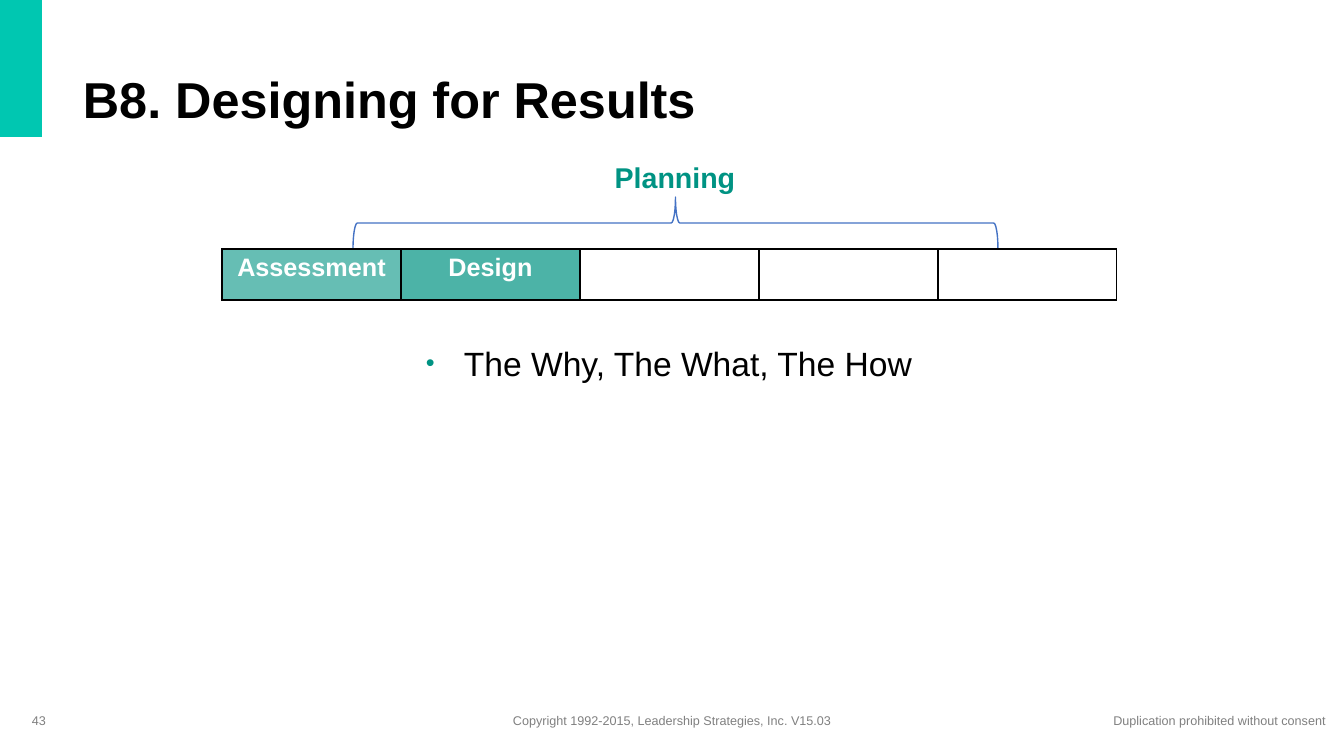
from lxml.etree import SubElement
from pptx import Presentation
from pptx.dml.color import RGBColor
from pptx.enum.shapes import MSO_SHAPE
from pptx.enum.text import MSO_ANCHOR as Anchor, PP_ALIGN as Align
from pptx.oxml.ns import qn
from pptx.util import Emu, Pt

COLORS = {"accent": "00C7B1", "teal": "009383", "brace": "4472C4",
          "black": "000000", "white": "FFFFFF", "grey": "808080"}
FONT = "Arial"
SLIDE = (1344, 756)
ACCENT_BAR = (-2, -2, 44, 139)
BRACE = (353, 197, 645, 52)  # as seen, opening downwards
STAGES = [("Assessment", 60), ("Design", 70), ("", None), ("", None), ("", None)]
STAGE_TABLE = (222, 249, 895, 51)
TEXTS = {
    "number": dict(text="43", at=(22, 701, 302, 40), size=9, color="grey", anchor=Anchor.MIDDLE),
    "title": dict(text="B8. Designing for Results", at=(73, 57, 818, 77), size=36,
                  color="black", bold=True, anchor=Anchor.BOTTOM, spacing=0.9),
    "topic": dict(text="The Why, The What, The How", at=(134, 342, 1070, 340), size=24,
                  color="black", align=Align.CENTER, spacing=0.9, bullet=True),
    "planning": dict(text="Planning", at=(601, 155, 148, 50), size=20.4,
                     color="teal", bold=True, align=Align.CENTER),
    "copyright": dict(text="Copyright 1992-2015, Leadership Strategies, Inc. V15.03",
                      at=(501, 708, 342, 25), size=9, color="grey", align=Align.CENTER, wrap=False),
    "notice": dict(text="Duplication prohibited without consent",
                   at=(1102, 708, 235, 25), size=9, color="grey", align=Align.CENTER, wrap=False),
}


def px(length):
    return Emu(round(length * 914400 / 100.8))


def place(at):
    return [px(length) for length in at]


def rgb(name):
    return RGBColor.from_string(COLORS[name])


def write(para, text, size, color, bold=False):
    span = para.add_run()
    span.text = text
    span.font.name, span.font.size, span.font.bold = FONT, Pt(size), bold
    span.font.color.rgb = rgb(color)


def add_bullet(para):
    props = para._p.get_or_add_pPr()
    props.set("marL", str(px(38)))
    props.set("indent", str(px(-38)))
    SubElement(SubElement(props, qn("a:buClr")), qn("a:srgbClr"), val=COLORS["teal"])
    SubElement(props, qn("a:buSzPct"), val="75000")
    SubElement(props, qn("a:buFont"), typeface=FONT)
    SubElement(props, qn("a:buChar"), char="•")


def add_text(page, text, at, size, color, bold=False, align=Align.LEFT,
             anchor=Anchor.TOP, spacing=1.0, wrap=True, bullet=False):
    frame = page.shapes.add_textbox(*place(at)).text_frame
    frame.word_wrap, frame.vertical_anchor = wrap, anchor
    para = frame.paragraphs[0]
    para.alignment, para.line_spacing = align, spacing
    if bullet:
        add_bullet(para)
    write(para, text, size, color, bold)


def add_bar(page):
    bar = page.shapes.add_shape(MSO_SHAPE.RECTANGLE, *place(ACCENT_BAR))
    bar.shadow.inherit = False
    bar.fill.solid()
    bar.fill.fore_color.rgb = rgb("accent")
    bar.line.fill.background()


def add_brace(page):
    """Turn a right brace a quarter so that it points up, keeping its centre."""
    left, top, width, height = BRACE
    shift = (width - height) / 2
    brace = page.shapes.add_shape(MSO_SHAPE.RIGHT_BRACE,
                                  *place((left + shift, top - shift, height, width)))
    brace.rotation = 270
    brace.shadow.inherit = False
    brace.fill.background()
    brace.line.color.rgb = rgb("brace")
    brace.line.width = Pt(1)


def add_borders(cell):
    props = cell._tc.get_or_add_tcPr()
    for side in ("lnL", "lnR", "lnT", "lnB"):
        line = SubElement(props, qn(f"a:{side}"), w=str(Pt(1)))
        fill = SubElement(line, qn("a:solidFill"))
        SubElement(fill, qn("a:srgbClr"), val=COLORS["black"])


def add_stages(page):
    table = page.shapes.add_table(1, len(STAGES), *place(STAGE_TABLE)).table
    table.first_row = table.horz_banding = False
    for cell, (stage, opacity) in zip(table.rows[0].cells, STAGES):
        add_borders(cell)
        if not stage:
            cell.fill.background()
            continue
        cell.fill.solid()
        cell.fill.fore_color.rgb = rgb("teal")
        tint = cell._tc.tcPr.find(f"{qn('a:solidFill')}/{qn('a:srgbClr')}")
        SubElement(tint, qn("a:alpha"), val=str(opacity * 1000))
        para = cell.text_frame.paragraphs[0]
        para.alignment = Align.CENTER
        write(para, stage, 18, "white", bold=True)


def main():
    deck = Presentation()
    deck.slide_width, deck.slide_height = place(SLIDE)
    page = deck.slides.add_slide(deck.slide_layouts[6])
    add_bar(page)
    for text in TEXTS.values():
        add_text(page, **text)
    add_brace(page)
    add_stages(page)
    deck.save("out.pptx")


if __name__ == "__main__":
    main()
